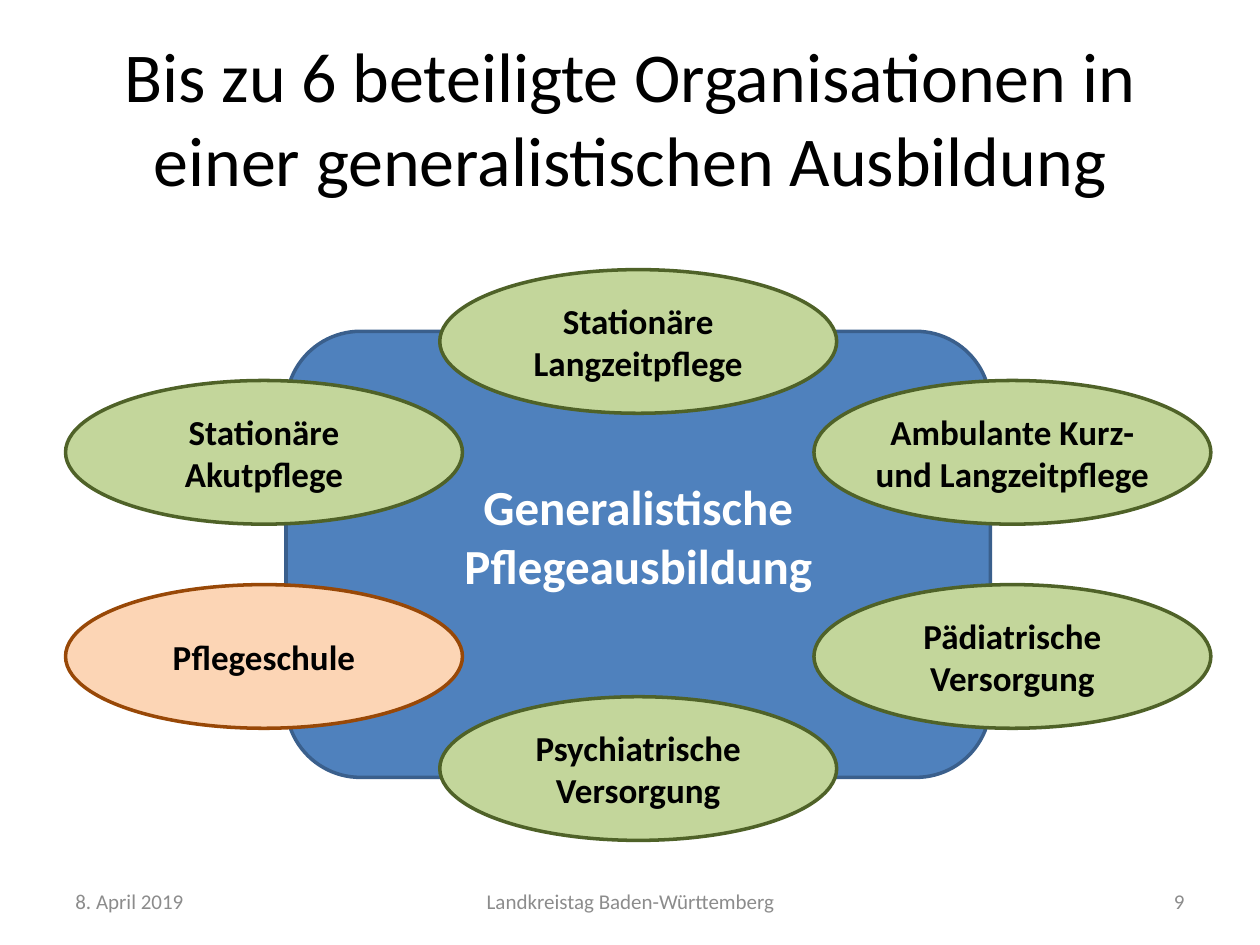
from dataclasses import dataclass

from pptx import Presentation
from pptx.dml.color import RGBColor
from pptx.enum import shapes, text
from pptx.util import Inches, Pt


@dataclass(frozen=True)
class Theme:
    font: str = "Calibri"
    black: str = "000000"
    white: str = "FFFFFF"
    gray: str = "8C8C8C"
    blue: tuple = ("4F81BD", "3A5F8C")  # fill, line
    green: tuple = ("C3D69B", "4F6228")
    orange: tuple = ("FCD5B5", "984807")
    title: int = 40
    hub: int = 28
    label: int = 20
    footer: int = 12
    line: int = 2


class Builder:
    def __init__(self, slide, theme):
        self.slide = slide
        self.theme = theme

    def set_text(self, sp, content, size, color, align=text.PP_ALIGN.CENTER,
                 bold=False, wrap=True):
        tf = sp.text_frame
        tf.word_wrap = wrap
        tf.vertical_anchor = text.MSO_ANCHOR.MIDDLE
        p = tf.paragraphs[0]
        p.text = content
        p.alignment = align
        p.font.name = self.theme.font
        p.font.size = Pt(size)
        p.font.bold = bold
        p.font.color.rgb = RGBColor.from_string(color)

    def text_box(self, box, content, size, color, align=text.PP_ALIGN.CENTER):
        sp = self.slide.shapes.add_textbox(*map(Inches, box))
        self.set_text(sp, content, size, color, align)

    def shape(self, kind, box, colors, content, size, color, wrap=True):
        sp = self.slide.shapes.add_shape(kind, *map(Inches, box))
        fill, line = colors
        sp.shadow.inherit = False
        sp.fill.solid()
        sp.fill.fore_color.rgb = RGBColor.from_string(fill)
        sp.line.color.rgb = RGBColor.from_string(line)
        sp.line.width = Pt(self.theme.line)
        self.set_text(sp, content, size, color, bold=True, wrap=wrap)
        return sp

    def hub(self, box, content):
        t = self.theme
        sp = self.shape(shapes.MSO_SHAPE.ROUNDED_RECTANGLE, box, t.blue,
                        content, t.hub, t.white)
        sp.text_frame.vertical_anchor = text.MSO_ANCHOR.TOP
        sp.text_frame.margin_top = Inches(0.98)

    def organisation(self, box, content, colors):
        self.shape(shapes.MSO_SHAPE.OVAL, box, colors, content,
                   self.theme.label, self.theme.black, wrap=False)


def main():
    prs = Presentation()
    prs.slide_width, prs.slide_height = Inches(10), Inches(7.5)
    t = Theme()
    s = Builder(prs.slides.add_slide(prs.slide_layouts[6]), t)

    # Title
    s.text_box((0.5, 0.3, 9, 1.25),
               "Bis zu 6 beteiligte Organisationen in einer generalistischen Ausbildung",
               t.title, t.black)

    # Central training programme
    s.hub((2.27, 2.63, 5.59, 3.54), "Generalistische Pflegeausbildung")

    # Organisations around it: column -1, 0, 1 and top edge
    center, step, width, height = 3.49, 2.97, 3.15, 1.14
    top, upper, lower, bottom = 2.14, 3.02, 4.64, 5.53
    organisations = [
        (0, top, "Stationäre\nLangzeitpflege", t.green),
        (-1, upper, "Stationäre\nAkutpflege", t.green),
        (1, upper, "Ambulante Kurz-\nund Langzeitpflege", t.green),
        (0, bottom, "Psychiatrische\nVersorgung", t.green),
        (1, lower, "Pädiatrische\nVersorgung", t.green),
        (-1, lower, "Pflegeschule", t.orange),
    ]
    for column, y, name, colors in organisations:
        s.organisation((center + column * step, y, width, height), name, colors)

    # Footer
    for x, w, content, align in [
        (0.5, 2.33, "8. April 2019", text.PP_ALIGN.LEFT),
        (3.42, 3.17, "Landkreistag Baden-Württemberg", text.PP_ALIGN.CENTER),
        (7.17, 2.33, "9", text.PP_ALIGN.RIGHT),
    ]:
        s.text_box((x, 6.95, w, 0.4), content, t.footer, t.gray, align)

    prs.save("out.pptx")


if __name__ == "__main__":
    main()
